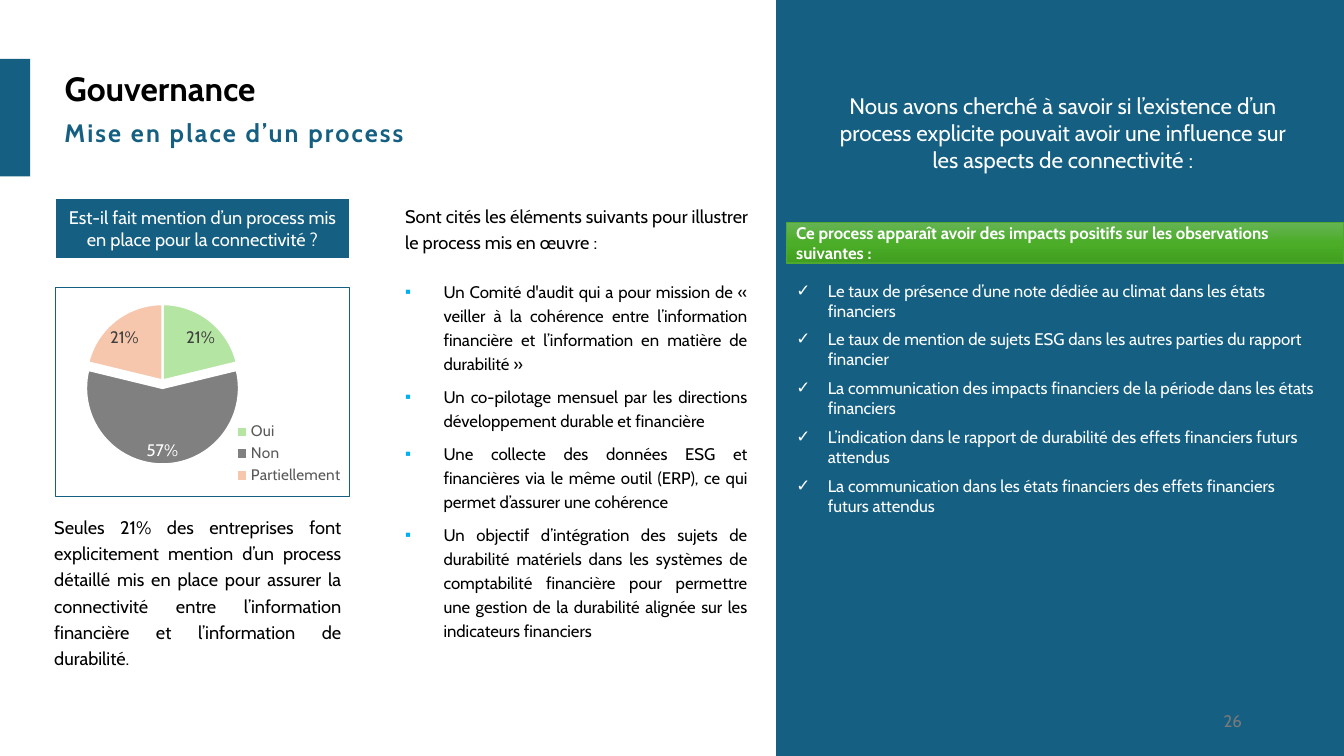
"""Build the governance slide on explicit connectivity processes."""
from dataclasses import dataclass
from typing import Optional

from pptx import Presentation, oxml
from pptx import util as u
from pptx.chart import data
from pptx.dml import color
from pptx.enum import chart as charts, shapes, text
from pptx.oxml import ns


@dataclass(frozen=True)
class Theme:
    font: str = "Cabin"
    blue: str = "156082"
    white: str = "FFFFFF"
    black: str = "000000"
    grey: str = "797979"
    legend: str = "595959"
    label: str = "404040"
    bullet: str = "00B0F0"
    green: str = "4EA72E"
    gradient: tuple = ((0, "66B354"), (50, "4BAD28"), (100, "409F1E"))
    title: float = 24
    subtitle: float = 18
    lead: float = 16
    body: float = 13
    small: float = 12
    key: float = 11


@dataclass(frozen=True)
class Area:
    left: float
    top: float
    width: float
    height: float

    def points(self) -> tuple:
        return tuple(u.Pt(n) for n in (self.left, self.top, self.width, self.height))


@dataclass(frozen=True)
class Block:
    area: Area
    fill: str
    line: Optional[str] = None
    weight: float = 1


@dataclass(frozen=True)
class Slice:
    name: str
    share: float
    fill: str
    label: str
    explosion: int = 0


THEME = Theme()
TOP, MIDDLE = text.MSO_ANCHOR.TOP, text.MSO_ANCHOR.MIDDLE
LEFT, RIGHT = text.PP_ALIGN.LEFT, text.PP_ALIGN.RIGHT
CENTER, JUSTIFY = text.PP_ALIGN.CENTER, text.PP_ALIGN.JUSTIFY

ACCENT = Block(Area(0, 42, 21.5, 84), THEME.blue)
PANEL = Block(Area(554.4, 0, 405.6, 540), THEME.blue)
QUESTION = Block(Area(39, 141.4, 211, 43.6), THEME.blue, THEME.white, 1.5)
BAND = Block(Area(561.6, 159, 398.4, 29), THEME.green, THEME.green)

SLICES = (
    Slice("Oui", 0.21, "B4E5A2", THEME.label),
    Slice("Non", 0.57, "808080", THEME.white, 10),
    Slice("Partiellement", 0.21, "F6C6AD", THEME.label),
)
ELEMENTS = (
    "Un Comité d'audit qui a pour mission de « veiller à la cohérence entre l’information financière "
    "et l’information en matière de durabilité »",
    "Un co-pilotage mensuel par les directions développement durable et financière",
    "Une collecte des données ESG et financières via le même outil (ERP), ce qui permet d’assurer "
    "une cohérence",
    "Un objectif d’intégration des sujets de durabilité matériels dans les systèmes de comptabilité "
    "financière pour permettre une gestion de la durabilité alignée sur les indicateurs financiers",
)
IMPACTS = (
    "Le taux de présence d’une note dédiée au climat dans les états financiers",
    "Le taux de mention de sujets ESG dans les autres parties du rapport financier",
    "La communication des impacts financiers de la période dans les états financiers",
    "L’indication dans le rapport de durabilité des effets financiers futurs attendus",
    "La communication dans les états financiers des effets financiers futurs attendus",
)


def rgb(value: str) -> color.RGBColor:
    return color.RGBColor.from_string(value)


def write(box, words: str, *, size: float = THEME.body, ink: str = THEME.black, bold: bool = False,
          align=LEFT, lines: float = 1, before: float = 0, after: float = 0, spacing: float = 0,
          bullet: str = "", bullet_ink: str = THEME.white, indent: float = 0) -> None:
    frame = box.text_frame
    para = frame.add_paragraph() if frame.text else frame.paragraphs[0]
    props = list(box.element.iter(ns.qn("a:p")))[-1].get_or_add_pPr()
    props.set("marL", str(u.Pt(indent)))
    props.set("indent", str(-u.Pt(indent)))
    marks = (f'<a:buClr {{0}}><a:srgbClr val="{bullet_ink}"/></a:buClr>',
             f'<a:buChar {{0}} char="{bullet}"/>') if bullet else ("<a:buNone {0}/>",)
    for mark in marks:
        props.append(oxml.parse_xml(mark.format(ns.nsdecls("a"))))
    para.alignment, para.line_spacing = align, lines
    para.space_before, para.space_after = u.Pt(before), u.Pt(after)
    span = para.add_run()
    span.text = words
    font = span.font
    font.name, font.size, font.bold = THEME.font, u.Pt(size), bold
    font.color.rgb = rgb(ink)
    if spacing:
        list(box.element.iter(ns.qn("a:rPr")))[-1].set("spc", str(round(spacing * 100)))


def frame_text(box, anchor=TOP):
    box.text_frame.word_wrap = True
    box.text_frame.auto_size = text.MSO_AUTO_SIZE.NONE
    box.text_frame.vertical_anchor = anchor
    return box


def place(holder, area: Area):
    holder.left, holder.top, holder.width, holder.height = area.points()
    return frame_text(holder)


def add_box(page, area: Area, anchor=TOP):
    return frame_text(page.shapes.add_textbox(*area.points()), anchor)


def add_block(page, block: Block):
    shape = page.shapes.add_shape(shapes.MSO_SHAPE.RECTANGLE, *block.area.points())
    shape.shadow.inherit = False
    shape.fill.solid()
    shape.fill.fore_color.rgb = rgb(block.fill)
    if block.line:
        shape.line.color.rgb = rgb(block.line)
        shape.line.width = u.Pt(block.weight)
    else:
        shape.line.fill.background()
    return frame_text(shape, MIDDLE)


def shade(shape) -> None:
    shape.fill.gradient()
    shape.fill.gradient_angle = 270
    stops = next(shape.element.iter(ns.qn("a:gsLst")))
    stops.clear()
    for position, ink in THEME.gradient:
        stops.append(oxml.parse_xml(f'<a:gs {ns.nsdecls("a")} pos="{position * 1000}">'
                                    f'<a:srgbClr val="{ink}"/></a:gs>'))


def manual_layout(x: float, y: float, w: float, h: float, target: str = ""):
    return oxml.parse_xml(
        f'<c:layout {ns.nsdecls("c")}><c:manualLayout>{target}<c:xMode val="edge"/><c:yMode val="edge"/>'
        f'<c:x val="{x}"/><c:y val="{y}"/><c:w val="{w}"/><c:h val="{h}"/></c:manualLayout></c:layout>')


def style(font, size: float, ink: str) -> None:
    font.name, font.size, font.bold = THEME.font, u.Pt(size), False
    font.color.rgb = rgb(ink)


def add_pie(page, area: Area) -> None:
    values = data.CategoryChartData(number_format="0%")
    values.categories = [part.name for part in SLICES]
    values.add_series("Series 1", [part.share for part in SLICES])
    pie = page.shapes.add_chart(charts.XL_CHART_TYPE.PIE, *area.points(), values).chart
    pie.has_title, pie.has_legend = False, True
    style(pie.font, 10, THEME.black)
    style(pie.legend.font, THEME.key, THEME.legend)
    pie.legend.position = charts.XL_LEGEND_POSITION.RIGHT
    pie.legend.include_in_layout = False
    plot = pie.plots[0]
    plot.vary_by_categories = True
    series = plot.series[0]
    labels = series.data_labels
    labels.show_value, labels.show_percentage = True, False
    labels.number_format, labels.number_format_is_linked = "0%", False
    labels.position = charts.XL_LABEL_POSITION.BEST_FIT
    style(labels.font, THEME.small, THEME.label)
    for index, part in enumerate(SLICES):
        point = series.points[index]
        point.format.fill.solid()
        point.format.fill.fore_color.rgb = rgb(part.fill)
        point.format.line.color.rgb = rgb(THEME.white)
        point.format.line.width = u.Pt(1.5)
        if part.explosion:
            style(point.data_label.font, THEME.small, part.label)
            point.data_label.position = charts.XL_LABEL_POSITION.BEST_FIT
            next(pie.element.iter(ns.qn("c:dPt"))).getparent().findall(ns.qn("c:dPt"))[index].find(
                ns.qn("c:spPr")).addprevious(oxml.parse_xml(
                    f'<c:explosion {ns.nsdecls("c")} val="{part.explosion}"/>'))
    zone = next(pie.element.iter(ns.qn("c:plotArea")))
    for old in zone.findall(ns.qn("c:layout")):
        zone.remove(old)
    zone.insert(0, manual_layout(0.08, 0.08, 0.57, 0.73, '<c:layoutTarget val="inner"/>'))
    next(pie.element.iter(ns.qn("c:legendPos"))).addnext(manual_layout(0.6, 0.63, 0.39, 0.33))
    pie.element.find(ns.qn("c:chart")).addnext(oxml.parse_xml(
        f'<c:spPr {ns.nsdecls("c", "a")}><a:noFill/><a:ln w="{u.Pt(0.75)}"><a:solidFill>'
        f'<a:srgbClr val="{THEME.blue}"/></a:solidFill></a:ln></c:spPr>'))


def main() -> None:
    deck = Presentation()
    deck.slide_width, deck.slide_height = u.Pt(960), u.Pt(540)
    page = deck.slides.add_slide(deck.slide_layouts[3])
    title, elements, impacts = page.placeholders
    for block in (PANEL, ACCENT):
        back = add_block(page, block).element
        back.getparent().insert(2, back)
    write(place(title, Area(39, 44.6, 433, 36)), "Gouvernance", size=THEME.title, bold=True)
    write(add_box(page, Area(39, 80.6, 490, 29)), "Mise en place d’un process",
          size=THEME.subtitle, ink=THEME.blue, bold=True, spacing=1.5)
    write(add_block(page, QUESTION), "Est-il fait mention d’un process mis en place pour la connectivité ?",
          ink=THEME.white, align=CENTER)
    add_pie(page, Area(39, 205, 211, 150))
    write(add_box(page, Area(31.7, 362, 219, 120)),
          "Seules 21% des entreprises font explicitement mention d’un process détaillé mis en place pour "
          "assurer la connectivité entre l’information financière et l’information de durabilité.",
          align=JUSTIFY, lines=1.2)
    place(elements, Area(282.2, 139.7, 259.2, 345))
    write(elements, "Sont cités les éléments suivants pour illustrer le process mis en œuvre :",
          align=JUSTIFY, lines=1.2, after=17.5)
    for item in ELEMENTS:
        write(elements, item, size=THEME.small, align=JUSTIFY, lines=1.2, after=6,
              bullet="▪", bullet_ink=THEME.bullet, indent=27.4)
    write(add_box(page, Area(585.4, 62.6, 347.8, 65.5)),
          "Nous avons cherché à savoir si l’existence d’un process explicite pouvait avoir une influence "
          "sur les aspects de connectivité :", size=THEME.lead, ink=THEME.white, align=CENTER)
    band = add_block(page, BAND)
    shade(band)
    write(band, "Ce process apparaît avoir des impacts positifs sur les observations suivantes :",
          size=THEME.small, ink=THEME.white, bold=True)
    place(impacts, Area(561.6, 196.6, 387.4, 177))
    for index, item in enumerate(IMPACTS):
        write(impacts, item, size=THEME.small, ink=THEME.white, before=6 if index else 0,
              bullet="✓", indent=22.5)
    write(add_box(page, Area(678.2, 500.4, 216, 28.8), MIDDLE), "26",
          size=THEME.small, ink=THEME.grey, align=RIGHT)
    deck.save("out.pptx")


if __name__ == "__main__":
    main()
